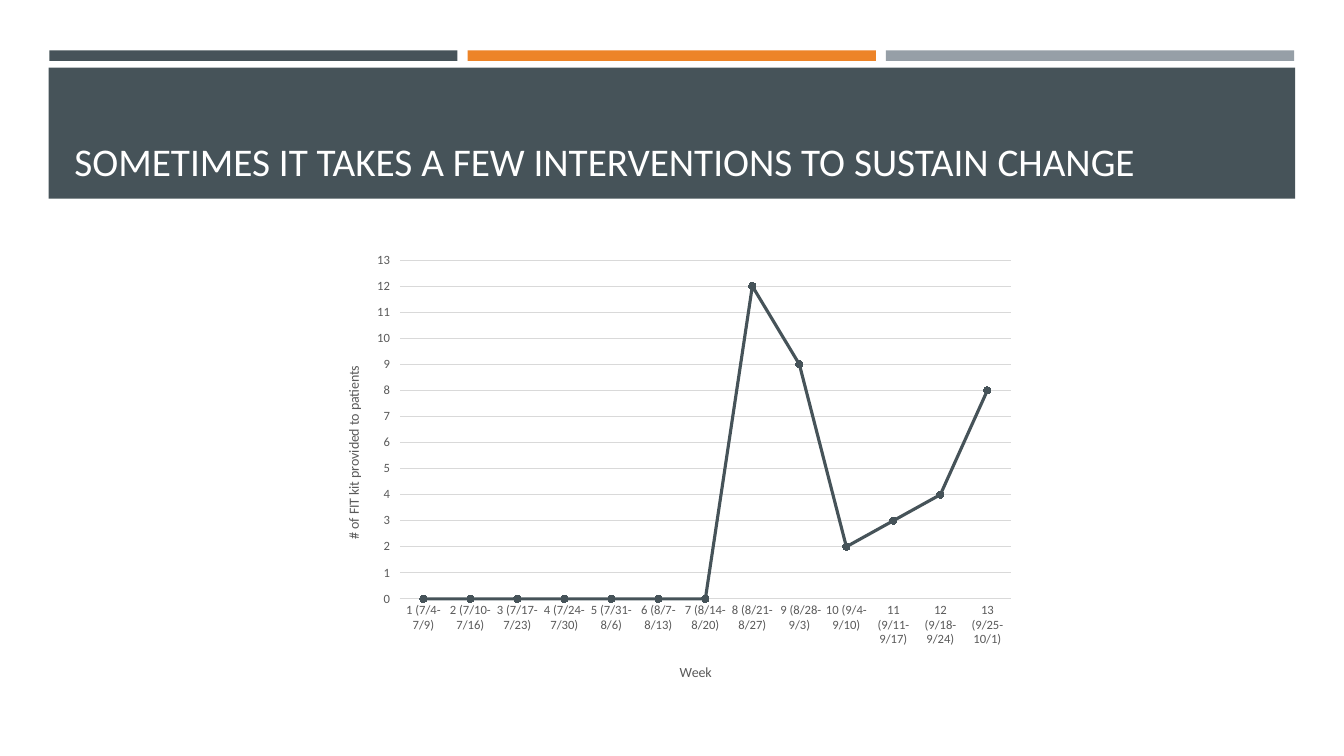
"""Build the slide on sustaining change with a weekly FIT kit line chart."""
from dataclasses import dataclass

from lxml import etree
from pptx import Presentation
from pptx.chart.axis import _BaseAxis
from pptx.chart.data import CategoryChartData
from pptx.dml.color import RGBColor
from pptx.enum.chart import XL_CHART_TYPE, XL_MARKER_STYLE, XL_TICK_MARK
from pptx.enum.shapes import MSO_SHAPE
from pptx.enum.text import MSO_ANCHOR, MSO_AUTO_SIZE, PP_ALIGN
from pptx.oxml.ns import qn
from pptx.slide import Slide
from pptx.util import Pt

RECT = MSO_SHAPE.RECTANGLE
LINE_MARKERS = XL_CHART_TYPE.LINE_MARKERS
CIRCLE = XL_MARKER_STYLE.CIRCLE
TICK_NONE, TICK_OUT = XL_TICK_MARK.NONE, XL_TICK_MARK.OUTSIDE
BOTTOM, LEFT, NO_FIT = MSO_ANCHOR.BOTTOM, PP_ALIGN.LEFT, MSO_AUTO_SIZE.NONE

FONT = "Calibri"
COLORS = {"slate": "465359", "orange": "ED8428", "gray": "969FA7",
          "white": "FFFFFF", "label": "595959", "grid": "D9D9D9"}
TITLE = "SOMETIMES IT TAKES A FEW INTERVENTIONS TO SUSTAIN CHANGE"
BAR_LEFT, BAR_PITCH = 35.2, 298.8
WEEKS = {
    "1 (7/4- 7/9)": 0, "2 (7/10-7/16)": 0, "3 (7/17-7/23)": 0,
    "4 (7/24-7/30)": 0, "5 (7/31-8/6)": 0, "6 (8/7-8/13)": 0,
    "7 (8/14-8/20)": 0, "8 (8/21-8/27)": 12, " 9 (8/28-9/3)": 9,
    "10 (9/4-9/10)": 2, "11 (9/11-9/17)": 3, "12 (9/18-9/24)": 4,
    "13 (9/25-10/1)": 8,
}


@dataclass
class Block:
    """A plain filled rectangle, in points."""
    left: float
    top: float
    width: float
    height: float
    color: str


BLOCKS = [Block(BAR_LEFT + i * BAR_PITCH, 36, 291.6, 7.5, color)
          for i, color in enumerate(("slate", "orange", "gray"))]
BLOCKS.append(Block(34.8, 48.4, 890.4, 93.6, "slate"))


def rgb(name: str) -> RGBColor:
    """Return a named colour."""
    return RGBColor.from_string(COLORS[name])


def add_block(s: Slide, block: Block) -> None:
    """Draw one rectangle."""
    sp = s.shapes.add_shape(RECT, Pt(block.left), Pt(block.top),
                            Pt(block.width), Pt(block.height))
    sp.shadow.inherit = False
    sp.fill.solid()
    sp.fill.fore_color.rgb = rgb(block.color)
    sp.line.fill.background()


def format_title(s: Slide) -> None:
    """Fill the title placeholder and bring it to the front."""
    sp = s.shapes.title
    sp.left, sp.top, sp.width, sp.height = Pt(46), Pt(55.4), Pt(868.4), Pt(80)
    tf = sp.text_frame
    tf.text = TITLE
    tf.word_wrap = True
    tf.auto_size = NO_FIT
    tf.vertical_anchor = BOTTOM
    p = tf.paragraphs[0]
    p.alignment = LEFT
    font = p.runs[0].font
    font.name, font.size, font.color.rgb = FONT, Pt(28), rgb("white")
    sp.element.getparent().append(sp.element)


def set_layout(parent: etree._Element, index: int, **values: float | str) -> None:
    """Give a chart part a manual layout as fractions of the chart."""
    for old in parent.findall(qn("c:layout")):
        parent.remove(old)
    layout = etree.Element(qn("c:layout"))
    manual = etree.SubElement(layout, qn("c:manualLayout"))
    for tag, value in values.items():
        etree.SubElement(manual, qn(f"c:{tag}")).set("val", str(value))
    parent.insert(index, layout)


def format_axis(axis: _BaseAxis, title: str, x: float, y: float) -> None:
    """Style the labels and title of an axis."""
    font = axis.tick_labels.font
    font.name, font.size, font.color.rgb = FONT, Pt(9), rgb("label")
    axis.minor_tick_mark = TICK_NONE
    tf = axis.axis_title.text_frame
    tf.text = title
    font = tf.paragraphs[0].runs[0].font
    font.name, font.size, font.bold = FONT, Pt(10), False
    font.color.rgb = rgb("label")
    set_layout(axis.axis_title.element, 1, xMode="edge", yMode="edge", x=x, y=y)


def add_kit_chart(s: Slide) -> None:
    """Add the line chart of kits provided each week."""
    data = CategoryChartData()
    data.categories = list(WEEKS)
    data.add_series("Series 1", list(WEEKS.values()))
    chart = s.shapes.add_chart(LINE_MARKERS, Pt(228.2), Pt(174.2),
                               Pt(504), Pt(324), data).chart
    chart.has_legend = chart.has_title = False
    chart.font.name, chart.font.size = FONT, Pt(10)
    set_layout(chart.element.find(".//" + qn("c:plotArea")), 0,
               layoutTarget="inner", xMode="edge", yMode="edge",
               x=0.114, y=0.036, w=0.866, h=0.747)

    weeks, kits = chart.category_axis, chart.value_axis
    format_axis(weeks, "Week", 0.507, 0.918)
    weeks.major_tick_mark = TICK_NONE
    weeks.format.line.color.rgb = rgb("grid")
    weeks.format.line.width = Pt(0.75)
    format_axis(kits, "# of FIT kit provided to patients", 0.032, 0.263)
    kits.major_tick_mark = TICK_OUT
    kits.minimum_scale, kits.maximum_scale, kits.major_unit = 0, 13, 1
    kits.format.line.fill.background()
    grid = kits.major_gridlines.format.line
    grid.color.rgb, grid.width = rgb("grid"), Pt(0.75)

    plot = chart.plots[0]
    plot.vary_by_categories = False
    series = plot.series[0]
    series.smooth = False
    series.format.line.color.rgb = rgb("slate")
    series.format.line.width = Pt(2.25)
    marker = series.marker
    marker.style, marker.size = CIRCLE, 5
    marker.format.fill.solid()
    marker.format.fill.fore_color.rgb = rgb("slate")
    marker.format.line.color.rgb = rgb("slate")


def main() -> None:
    """Build and save the slide."""
    prs = Presentation()
    prs.slide_width, prs.slide_height = Pt(960), Pt(540)
    s = prs.slides.add_slide(prs.slide_layouts[5])
    for block in BLOCKS:
        add_block(s, block)
    format_title(s)
    add_kit_chart(s)
    prs.save("out.pptx")


if __name__ == "__main__":
    main()
